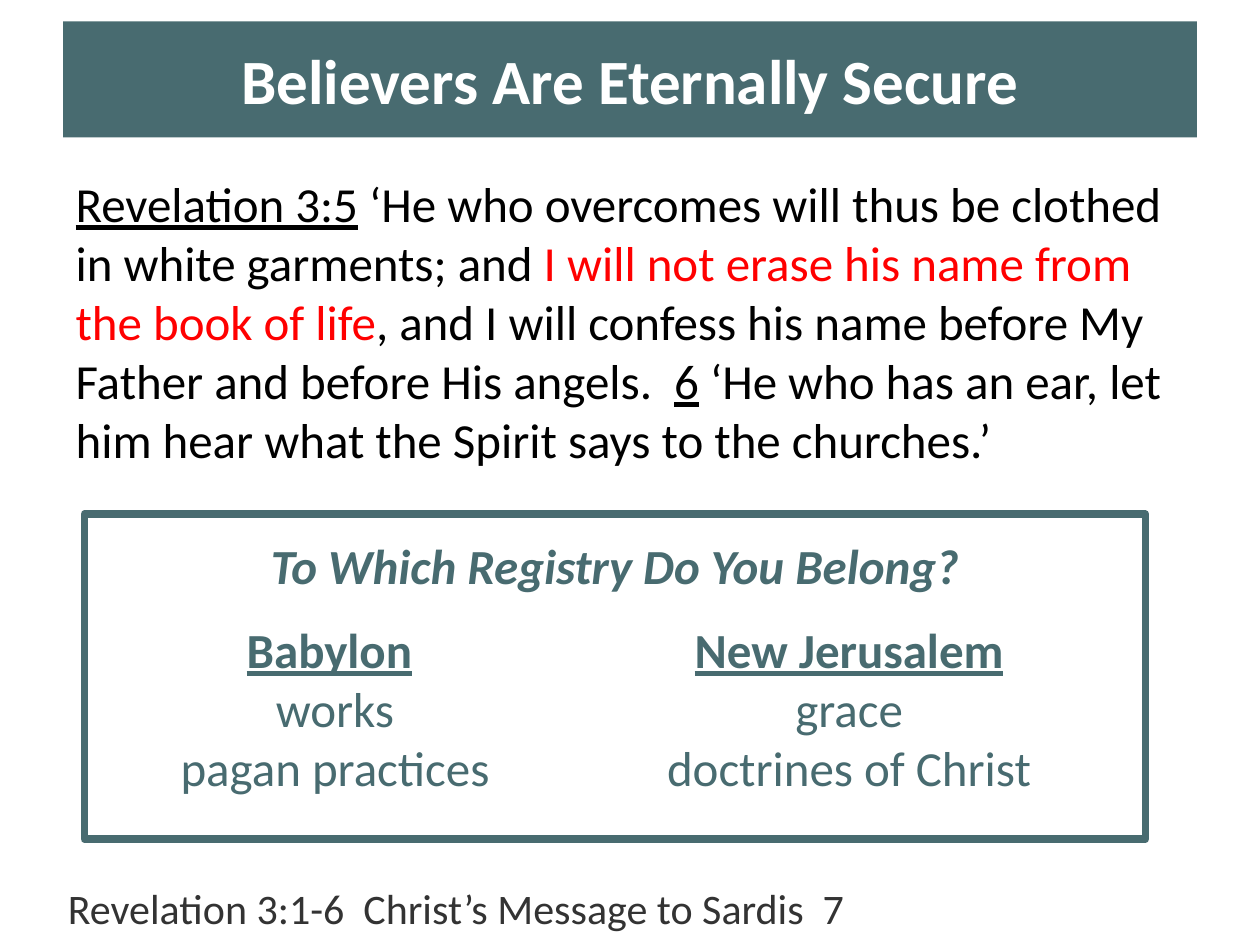
from dataclasses import dataclass

from lxml import etree
from pptx import Presentation
from pptx.dml.color import RGBColor
from pptx.enum import shapes, text
from pptx.oxml import ns
from pptx.util import Inches, Pt

COLORS = {"teal": "486B70", "white": "FFFFFF", "black": "000000",
          "red": "FF0000", "gray": "333333"}
FONT = "Calibri"


@dataclass(frozen=True)
class Span:
    words: str
    color: str = "black"
    size: int = 28
    bold: bool = False
    italic: bool = False
    underline: bool = False


@dataclass(frozen=True)
class TabStop:
    inches: float
    align: str


def rgb(name: str) -> RGBColor:
    return RGBColor.from_string(COLORS[name])


def place(box, left: float, top: float, width: float, height: float) -> None:
    box.left, box.top = Inches(left), Inches(top)
    box.width, box.height = Inches(width), Inches(height)


def add_spans(para, spans: list[Span]) -> None:
    for span in spans:
        run = para.add_run()
        run.text = span.words
        font = run.font
        font.name, font.size = FONT, Pt(span.size)
        font.bold, font.italic, font.underline = span.bold, span.italic, span.underline
        font.color.rgb = rgb(span.color)


def set_tabs(para, stops: list[TabStop]) -> None:
    tab_list = etree.SubElement(para._p.get_or_add_pPr(), ns.qn("a:tabLst"))
    for stop in stops:
        etree.SubElement(tab_list, ns.qn("a:tab"),
                         pos=str(Inches(stop.inches)), algn=stop.align)


def remove_bullet(para) -> None:
    properties = para._p.get_or_add_pPr()
    properties.set("marL", "0")
    properties.set("indent", "0")
    etree.SubElement(properties, ns.qn("a:buNone"))


def add_footer(page) -> None:
    box = page.shapes.add_textbox(*map(Inches, (0.44, 7.02, 9.15, 0.37)))
    box.text_frame.word_wrap = True
    box.text_frame.vertical_anchor = text.MSO_ANCHOR.MIDDLE
    para = box.text_frame.paragraphs[0]
    set_tabs(para, [TabStop(6.16, "r")])
    add_spans(para, [Span("Revelation 3:1-6  Christ’s Message to Sardis\t7", "gray", 24)])


def fill_title(page) -> None:
    title = page.shapes.title
    place(title, 0.5, 0.17, 9, 0.92)
    title.fill.solid()
    title.fill.fore_color.rgb = rgb("teal")
    frame = title.text_frame
    frame.auto_size = text.MSO_AUTO_SIZE.NONE
    frame.vertical_anchor = text.MSO_ANCHOR.MIDDLE
    para = frame.paragraphs[0]
    para.alignment = text.PP_ALIGN.CENTER
    add_spans(para, [Span("Believers Are Eternally Secure", "white", 36, bold=True)])


def fill_passage(page) -> None:
    body = page.placeholders[1]
    place(body, 0.5, 1.33, 9.17, 5.25)
    body.text_frame.auto_size = text.MSO_AUTO_SIZE.NONE
    para = body.text_frame.paragraphs[0]
    para.space_before = Pt(4)
    remove_bullet(para)
    add_spans(para, [
        Span("Revelation 3:5", underline=True),
        Span(" ‘He who overcomes will thus be clothed in white garments; and "),
        Span("I will not erase his name from the book of life", "red"),
        Span(", and I will confess his name before My Father and before His angels.  "),
        Span("6", underline=True),
        Span(" ‘He who has an ear, let him hear what the Spirit says to the churches.’"),
    ])


def add_registry_frame(page) -> None:
    box = page.shapes.add_shape(shapes.MSO_SHAPE.RECTANGLE,
                                *map(Inches, (0.67, 4.08, 8.42, 2.58)))
    box.shadow.inherit = False
    box.fill.background()
    box.line.color.rgb = rgb("teal")
    box.line.width = Pt(4.33)
    frame = box.text_frame
    frame.vertical_anchor = text.MSO_ANCHOR.TOP
    frame.margin_top = Inches(0.17)
    para = frame.paragraphs[0]
    para.alignment = text.PP_ALIGN.CENTER
    add_spans(para, [Span("To Which Registry Do You Belong?", "teal", bold=True, italic=True)])


def add_registry_columns(page) -> None:
    box = page.shapes.add_textbox(*map(Inches, (1, 4.87, 7.35, 1.51)))
    frame = box.text_frame
    frame.word_wrap = False
    frame.auto_size = text.MSO_AUTO_SIZE.SHAPE_TO_FIT_TEXT
    rows = [
        [Span("\t", "teal", bold=True),
         Span("Babylon", "teal", bold=True, underline=True),
         Span(" \t", "teal", bold=True),
         Span("New Jerusalem", "teal", bold=True, underline=True)],
        [Span("\tworks\tgrace", "teal")],
        [Span("\tpagan practices\tdoctrines of Christ", "teal")],
    ]
    for index, spans in enumerate(rows):
        para = frame.add_paragraph() if index else frame.paragraphs[0]
        set_tabs(para, [TabStop(1.56, "ctr"), TabStop(5.64, "ctr")])
        add_spans(para, spans)


def main() -> None:
    deck = Presentation()
    deck.slide_width, deck.slide_height = Inches(10), Inches(7.5)
    page = deck.slides.add_slide(deck.slide_layouts[1])
    add_footer(page)
    fill_passage(page)
    fill_title(page)
    add_registry_frame(page)
    add_registry_columns(page)
    deck.save("out.pptx")


if __name__ == "__main__":
    main()
